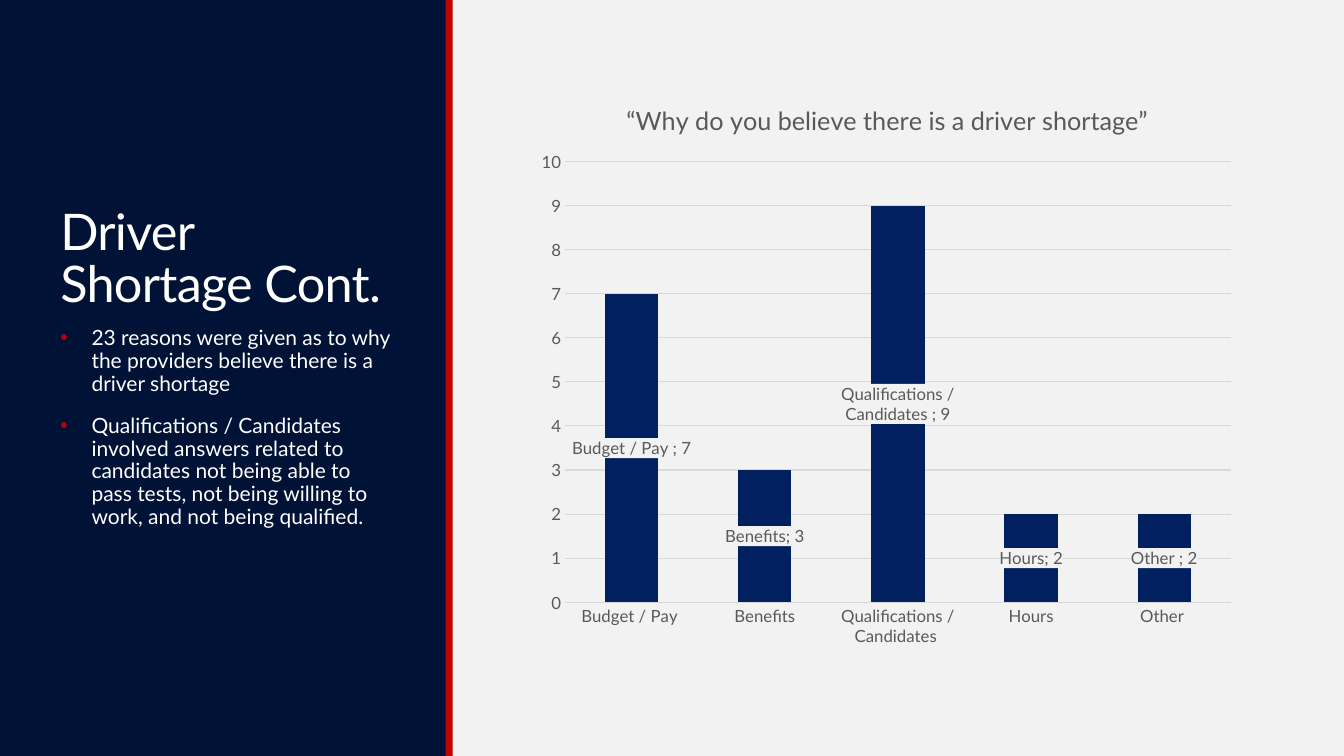
from lxml import etree
from pptx import Presentation
from pptx.chart.data import CategoryChartData
from pptx.dml.color import RGBColor
from pptx.enum import chart as charts, shapes, text
from pptx.oxml import parse_xml
from pptx.oxml.ns import nsdecls, qn
from pptx.util import Inches, Pt

FONT = "Lato"
BACKGROUND, NAVY, RED, WHITE = "F2F2F2", "001236", "C00000", "FFFFFF"
BAR, GRID, GREY = "002060", "D9D9D9", "595959"
REASONS = [
    "23 reasons were given as to why the providers believe there is a driver shortage",
    "Qualifications / Candidates involved answers related to candidates not being able "
    "to pass tests, not being willing to work, and not being qualified.",
]
ANSWERS = {
    "Budget / Pay ": 7,
    "Benefits": 3,
    "Qualifications / Candidates ": 9,
    "Hours": 2,
    "Other ": 2,
}


def paint(fill, color):
    """Give a fill one solid colour."""
    fill.solid()
    fill.fore_color.rgb = RGBColor.from_string(color)


def style_font(font, size, color):
    """Set the typeface, size and colour of a font."""
    font.name, font.size, font.bold = FONT, Pt(size), False
    font.color.rgb = RGBColor.from_string(color)


def add_band(slide, left, width, color):
    """Add a full-height vertical band."""
    band = slide.shapes.add_shape(
        shapes.MSO_SHAPE.RECTANGLE, Inches(left), 0, Inches(width), Inches(7.5))
    band.shadow.inherit = False
    paint(band.fill, color)
    band.line.fill.background()


def add_text_frame(slide, top, height, anchor):
    """Add a wrapping text box in the side panel and return its frame."""
    frame = slide.shapes.add_textbox(
        Inches(0.5), Inches(top), Inches(3.5), Inches(height)).text_frame
    frame.word_wrap = True
    frame.vertical_anchor = anchor
    return frame


def add_heading(slide, words):
    """Add the slide heading with slightly tightened letters."""
    heading = add_text_frame(slide, 0.65, 2.5, text.MSO_ANCHOR.BOTTOM).paragraphs[0]
    run = heading.add_run()
    run.text = words
    run.font._element.set("spc", "-50")
    heading.line_spacing = 0.85
    style_font(heading.font, 36, WHITE)


def add_bullets(slide, items):
    """Add the bulleted list below the heading."""
    frame = add_text_frame(slide, 3.2, 3.7, text.MSO_ANCHOR.TOP)
    for index, item in enumerate(items):
        bullet = frame.add_paragraph() if index else frame.paragraphs[0]
        bullet.text = item
        bullet.line_spacing = 0.9
        bullet.space_before = Pt(12 if index else 0)
        bullet.space_after = Pt(2)
        properties = bullet._p.get_or_add_pPr()
        properties.set("marL", str(Inches(0.31)))
        properties.set("indent", str(-Inches(0.31)))
        color = etree.SubElement(properties, qn("a:buClr"))
        etree.SubElement(color, qn("a:srgbClr"), val=RED)
        etree.SubElement(properties, qn("a:buFont"), typeface="Arial")
        etree.SubElement(properties, qn("a:buChar"), char="•")
        style_font(bullet.font, 15, WHITE)


def style_axis(axis):
    """Show an axis as grey labels without line or ticks."""
    axis.major_tick_mark = axis.minor_tick_mark = charts.XL_TICK_MARK.NONE
    axis.format.line.fill.background()
    style_font(axis.tick_labels.font, 12, GREY)


def add_labels(series):
    """Label the bars with category and value on a background-coloured plate."""
    labels = series.data_labels
    labels.show_category_name = labels.show_value = True
    labels.position = charts.XL_LABEL_POSITION.CENTER
    style_font(labels.font, 12, GREY)
    plate = parse_xml(
        f'<c:spPr {nsdecls("c", "a")}><a:solidFill><a:srgbClr val="{BACKGROUND}"/>'
        '</a:solidFill><a:ln><a:noFill/></a:ln></c:spPr>')
    labels._element.find(qn("c:txPr")).addprevious(plate)
    separator = etree.Element(qn("c:separator"))
    separator.text = "; "
    labels._element.find(qn("c:showBubbleSize")).addnext(separator)


def place_plot(chart, **bounds):
    """Fix the inner plot area as fractions of the chart."""
    layout = etree.Element(qn("c:layout"))
    manual = etree.SubElement(layout, qn("c:manualLayout"))
    etree.SubElement(manual, qn("c:layoutTarget"), val="inner")
    for side in "xy":
        etree.SubElement(manual, qn(f"c:{side}Mode"), val="edge")
    for name, fraction in bounds.items():
        etree.SubElement(manual, qn(f"c:{name}"), val=str(fraction))
    chart._chartSpace.chart.plotArea.insert(0, layout)


def add_answer_chart(slide, title, answers):
    """Add the column chart of answers."""
    data = CategoryChartData()
    data.categories = list(answers)
    data.add_series("Series 1", list(answers.values()))
    chart = slide.shapes.add_chart(
        charts.XL_CHART_TYPE.COLUMN_STACKED, Inches(5.25), Inches(0.8),
        Inches(7.1), Inches(5.75), data).chart
    style_font(chart.font, 10, "000000")
    chart.has_legend = False
    chart.has_title = True
    question = chart.chart_title.text_frame.paragraphs[0]
    question.text = title
    style_font(question.font, 18, GREY)
    chart.chart_title.include_in_layout = False

    style_axis(chart.category_axis)
    values = chart.value_axis
    style_axis(values)
    values.minimum_scale, values.maximum_scale, values.major_unit = 0, 10, 1
    values.has_major_gridlines = True
    grid = values.major_gridlines.format.line
    paint(grid.fill, GRID)
    grid.width = Pt(0.75)

    plot = chart.plots[0]
    plot.gap_width, plot.overlap, plot.vary_by_categories = 150, 100, False
    paint(plot.series[0].format.fill, BAR)
    add_labels(plot.series[0])
    place_plot(chart, x=0.05, y=0.14, w=0.93, h=0.76)


def main():
    """Build and save the slide."""
    deck = Presentation()
    deck.slide_width, deck.slide_height = Inches(13.33), Inches(7.5)
    slide = deck.slides.add_slide(deck.slide_layouts[6])
    paint(slide.background.fill, BACKGROUND)
    add_band(slide, 0, 4.43, NAVY)
    add_band(slide, 4.42, 0.07, RED)
    add_heading(slide, "Driver Shortage Cont.")
    add_answer_chart(slide, "“Why do you believe there is a driver shortage”", ANSWERS)
    add_bullets(slide, REASONS)
    deck.save("out.pptx")


if __name__ == "__main__":
    main()
